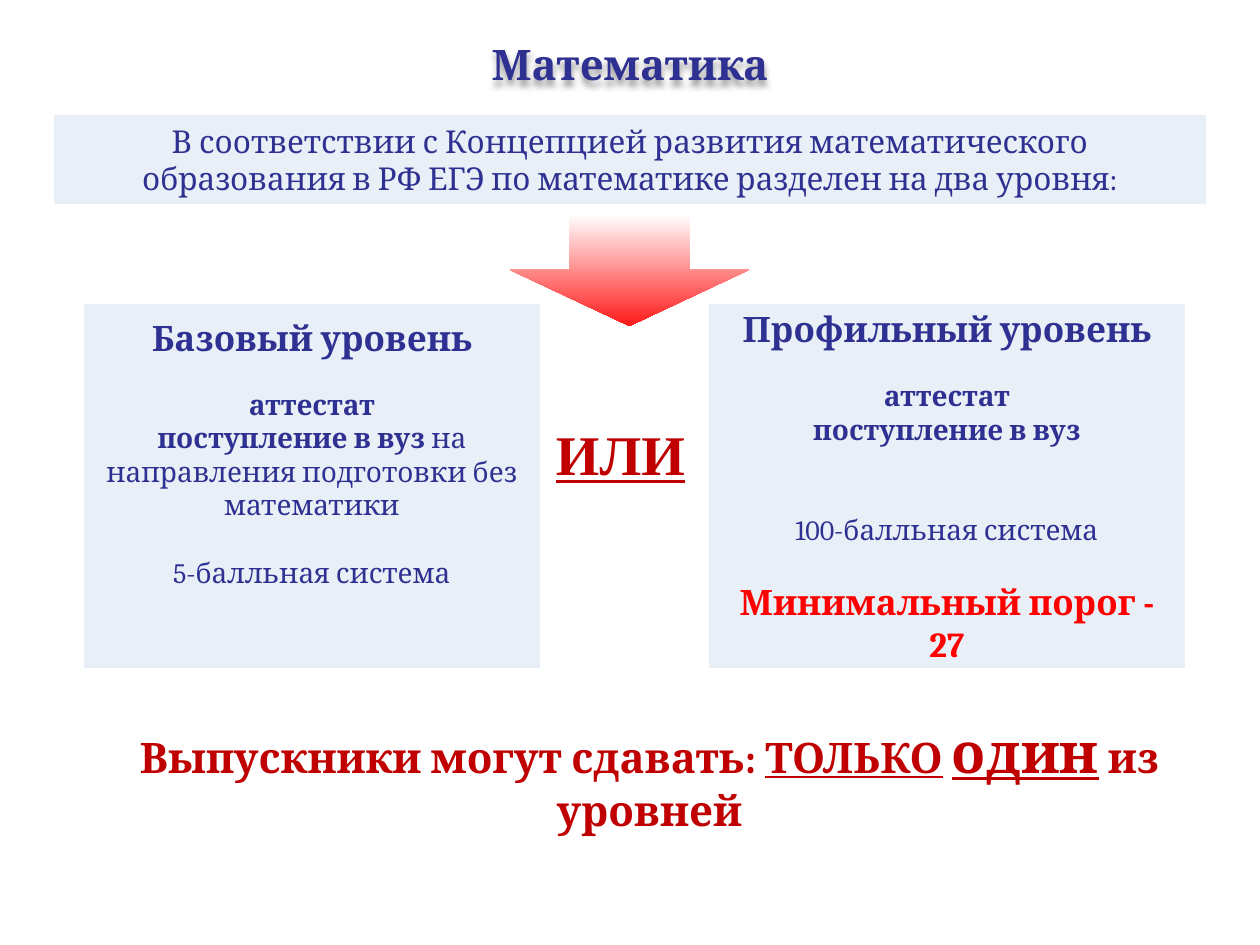
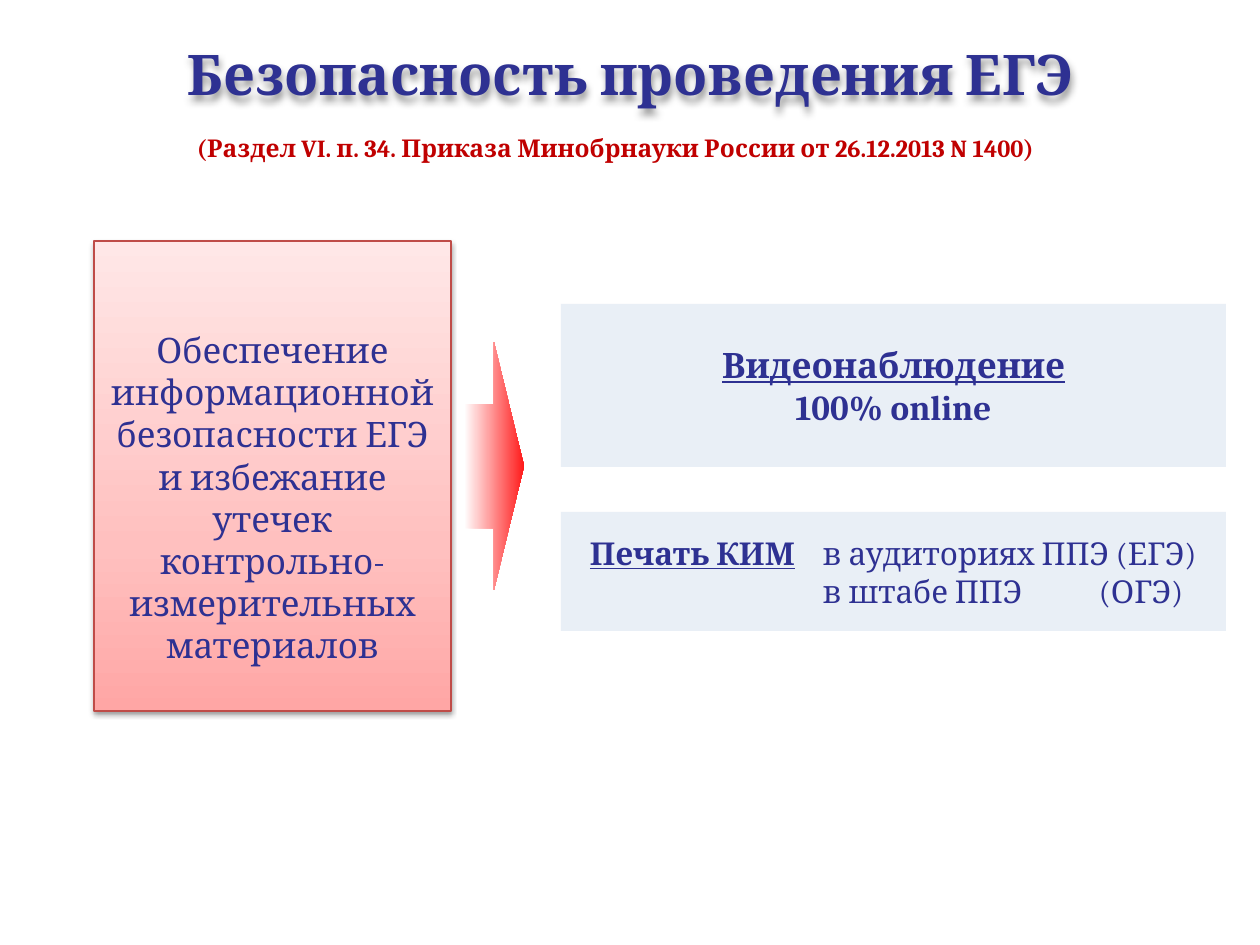
"""Builds two slides on the two-level mathematics exam and on exam security."""
from copy import deepcopy
from dataclasses import dataclass
from typing import NamedTuple, Optional

from lxml import etree
from pptx import Presentation
from pptx.dml.color import RGBColor
from pptx.enum.shapes import MSO_SHAPE
from pptx.enum.text import MSO_ANCHOR, PP_ALIGN
from pptx.oxml.ns import qn
from pptx.util import Emu, Pt

EMU_PER_PX = 914400 / 126
SLIDE_SIZE = (1260, 945)
BLANK_LAYOUT = 6

RECTANGLE = MSO_SHAPE.RECTANGLE
DOWN_ARROW = MSO_SHAPE.DOWN_ARROW
CENTER = PP_ALIGN.CENTER
LEFT = PP_ALIGN.LEFT
TOP = MSO_ANCHOR.TOP
MIDDLE = MSO_ANCHOR.MIDDLE

INDIGO = RGBColor(0x2E, 0x31, 0x92)
CRIMSON = RGBColor(0xC0, 0x00, 0x00)
RED = RGBColor(0xFF, 0x00, 0x00)
PALE_BLUE = RGBColor(0xB9, 0xCD, 0xE5)
BRICK = RGBColor(0xBF, 0x4C, 0x48)
ARROW_STOPS = ((0, RGBColor(0xFF, 0xFF, 0xFF)), (1, RGBColor(0xFF, 0x1A, 0x1A)))
PINK_STOPS = (
    (0, RGBColor(0xFF, 0xA6, 0xA5)),
    (0.35, RGBColor(0xFF, 0xC0, 0xBF)),
    (1, RGBColor(0xFF, 0xE7, 0xE7)),
)
DOWNWARD = 270
UPWARD = 90
PANEL_OPACITY = 31
BODY_FONT = "Cambria"
ACCENT_FONT = "Times New Roman"


class Area(NamedTuple):
    """Position and size in px."""
    left: int
    top: int
    width: int
    height: int


class Insets(NamedTuple):
    """Inner margins of a text frame in px."""
    left: int = 13
    top: int = 6
    right: int = 13
    bottom: int = 6


class Shadow(NamedTuple):
    """Downward shadow: blur and distance in px, opacity in percent."""
    blur: int
    distance: int
    opacity: int


@dataclass(frozen=True)
class Span:
    """Piece of a paragraph with the font settings that differ from it."""
    text: str
    size: Optional[int] = None
    bold: Optional[bool] = None
    underline: Optional[bool] = None


@dataclass(frozen=True)
class Para:
    """Paragraph with its shared font settings and spacing."""
    spans: tuple[Span, ...]
    size: int
    color: RGBColor = INDIGO
    bold: bool = False
    underline: bool = False
    font: str = BODY_FONT
    before: int = 0
    align: PP_ALIGN = CENTER
    tabs: tuple[int, ...] = ()


@dataclass(frozen=True)
class Panel:
    """Pale blue rectangle with text."""
    area: Area
    paras: tuple[Para, ...]
    insets: Insets = Insets()


TITLE_SHADOW = Shadow(7, 5, 40)
CARD_SHADOW = Shadow(5, 3, 38)


def px(length: int) -> Emu:
    """Turn px into EMU."""
    return Emu(round(length * EMU_PER_PX))


def line(text: str, size: int, **style) -> Para:
    """Make a paragraph of one span."""
    return Para((Span(text),), size, **style)


def add_tabs(paragraph, tabs: tuple[int, ...]) -> None:
    """Add left tab stops to a paragraph."""
    stops = etree.SubElement(paragraph._p.get_or_add_pPr(), qn("a:tabLst"))
    for position in tabs:
        etree.SubElement(stops, qn("a:tab"), pos=str(px(position)), algn="l")


def write(box, paras: tuple[Para, ...], anchor: MSO_ANCHOR, insets: Insets) -> None:
    """Fill a text frame with paragraphs."""
    frame = box.text_frame
    frame.word_wrap = True
    frame.vertical_anchor = anchor
    frame.margin_left, frame.margin_top, frame.margin_right, frame.margin_bottom = map(px, insets)
    for index, para in enumerate(paras):
        paragraph = frame.paragraphs[0] if index == 0 else frame.add_paragraph()
        paragraph.alignment = para.align
        if para.before:
            paragraph.space_before = px(para.before)
        if para.tabs:
            add_tabs(paragraph, para.tabs)
        font = paragraph.font
        font.name, font.size, font.bold = para.font, Pt(para.size), para.bold
        font.underline = para.underline
        font.color.rgb = para.color
        for span in para.spans:
            run = paragraph.add_run()
            run.text = span.text
            if span.size is not None:
                run.font.size = Pt(span.size)
            if span.bold is not None:
                run.font.bold = span.bold
            if span.underline is not None:
                run.font.underline = span.underline


def add_shadow(box, shadow: Shadow) -> None:
    """Give a box a soft black shadow below it."""
    box.shadow.inherit = False
    effects = box.element.spPr.find(qn("a:effectLst"))
    outer = etree.SubElement(
        effects, qn("a:outerShdw"), blurRad=str(px(shadow.blur)), dist=str(px(shadow.distance)),
        dir="5400000", rotWithShape="0")
    color = etree.SubElement(outer, qn("a:srgbClr"), val="000000")
    etree.SubElement(color, qn("a:alpha"), val=str(shadow.opacity * 1000))


def add_text(page, area: Area, para: Para):
    """Add a text box with one paragraph."""
    box = page.shapes.add_textbox(*map(px, area))
    write(box, (para,), TOP, Insets())
    return box


def add_title(page, area: Area, text: str, size: int) -> None:
    """Add a bold shadowed slide title."""
    add_shadow(add_text(page, area, line(text, size, bold=True)), TITLE_SHADOW)


def add_plain_shape(page, kind: MSO_SHAPE, area: Area):
    """Add a preset shape without line or shadow."""
    shape = page.shapes.add_shape(kind, *map(px, area))
    shape.shadow.inherit = False
    shape.line.fill.background()
    return shape


def add_panel(page, panel: Panel) -> None:
    """Add a translucent blue panel."""
    shape = add_plain_shape(page, RECTANGLE, panel.area)
    shape.fill.solid()
    shape.fill.fore_color.rgb = PALE_BLUE
    color = shape.element.spPr.find(qn("a:solidFill")).find(qn("a:srgbClr"))
    etree.SubElement(color, qn("a:alpha"), val=str(PANEL_OPACITY * 1000))
    write(shape, panel.paras, MIDDLE, panel.insets)


def fill_gradient(shape, stops: tuple[tuple[float, RGBColor], ...], angle: int) -> None:
    """Fill a shape with a linear gradient."""
    shape.fill.gradient()
    shape.fill.gradient_angle = angle
    stop_list = shape.element.spPr.find(qn("a:gradFill")).find(qn("a:gsLst"))
    for _ in stops[2:]:
        stop_list.append(deepcopy(stop_list[0]))
    for stop, (position, color) in zip(shape.fill.gradient_stops, stops):
        stop.position = position
        stop.color.rgb = color


def add_arrow(page, area: Area, rotation: int = 0) -> None:
    """Add a block arrow fading from white to red."""
    arrow = add_plain_shape(page, DOWN_ARROW, area)
    fill_gradient(arrow, ARROW_STOPS, DOWNWARD)
    arrow.rotation = rotation


def add_goal_card(page, area: Area, text: str) -> None:
    """Add the pink card that states the goal."""
    card = add_plain_shape(page, RECTANGLE, area)
    fill_gradient(card, PINK_STOPS, UPWARD)
    card.line.color.rgb = BRICK
    card.line.width = Pt(0.75)
    add_shadow(card, CARD_SHADOW)
    write(card, (line(text, 20),), MIDDLE, Insets(top=48))


def build_levels(page) -> None:
    """Build the slide on the two levels of the mathematics exam."""
    add_title(page, Area(54, 33, 1152, 63), "Математика", 24)
    add_text(page, Area(54, 711, 1191, 145), Para((
        Span("Выпускники могут сдавать: "), Span("ТОЛЬКО", underline=True), Span(" "),
        Span("один", size=32, underline=True), Span(" из уровней"),
    ), 24, CRIMSON, bold=True))
    basic = (
        line("Базовый уровень", 20, bold=True),
        line("аттестат", 16, bold=True, before=29),
        Para((Span("поступление в вуз ", bold=True),
              Span("на направления подготовки без математики")), 16),
        line("5-балльная система", 16, before=34),
    )
    advanced = (
        line("Профильный уровень", 20, bold=True),
        line("аттестат", 16, bold=True, before=29),
        line("поступление в вуз", 16, bold=True),
        line("100-балльная система", 16, before=67),
        line("Минимальный порог - 27", 20, color=RED, bold=True, before=34),
    )
    intro = line("В соответствии с Концепцией развития математического образования в РФ "
                 "ЕГЭ по математике разделен на два уровня:", 18)
    add_panel(page, Panel(Area(84, 304, 456, 364), basic, Insets(bottom=73)))
    add_panel(page, Panel(Area(709, 304, 476, 364), advanced))
    add_arrow(page, Area(510, 214, 239, 112))
    add_panel(page, Panel(Area(54, 115, 1152, 89), (intro,)))
    add_text(page, Area(541, 413, 159, 81),
             line("ИЛИ", 32, color=CRIMSON, bold=True, underline=True, font=ACCENT_FONT))


def build_security(page) -> None:
    """Build the slide on exam security."""
    add_title(page, Area(35, 34, 1191, 81), "Безопасность проведения ЕГЭ", 32)
    add_text(page, Area(184, 127, 1076, 43), line(
        "(Раздел VI. п. 34. Приказа Минобрнауки России от 26.12.2013 N 1400)",
        14, color=CRIMSON, bold=True, align=LEFT))
    add_goal_card(page, Area(94, 241, 357, 470),
                  "Обеспечение информационной безопасности ЕГЭ и избежание утечек "
                  "контрольно-измерительных материалов")
    video = (
        line("Видеонаблюдение", 20, bold=True, underline=True),
        line("100% online", 20, bold=True),
    )
    columns = (233, 509)
    printing = (
        Para((Span("Печать КИМ", bold=True, underline=True), Span("\tв аудиториях ППЭ (ЕГЭ)")),
             18, align=LEFT, tabs=columns),
        line("\tв штабе ППЭ\t(ОГЭ)", 18, align=LEFT, tabs=columns),
    )
    add_panel(page, Panel(Area(561, 304, 665, 163), video))
    add_panel(page, Panel(Area(561, 512, 665, 119), printing, Insets(left=29)))
    add_arrow(page, Area(370, 436, 248, 60), 270)


def main() -> None:
    """Build and save the deck."""
    deck = Presentation()
    deck.slide_width, deck.slide_height = map(px, SLIDE_SIZE)
    for build in (build_levels, build_security):
        build(deck.slides.add_slide(deck.slide_layouts[BLANK_LAYOUT]))
    deck.save("out.pptx")


if __name__ == "__main__":
    main()
